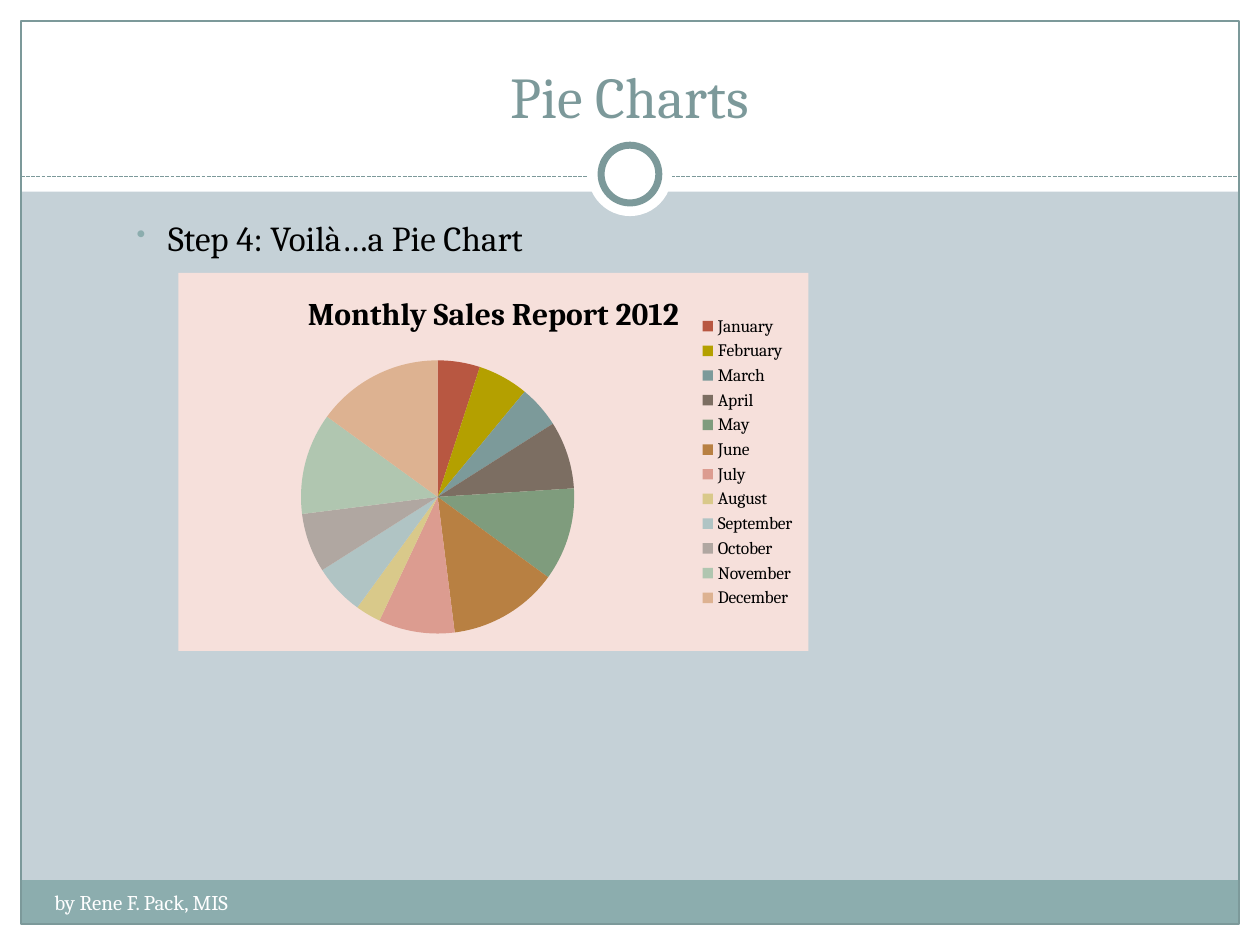
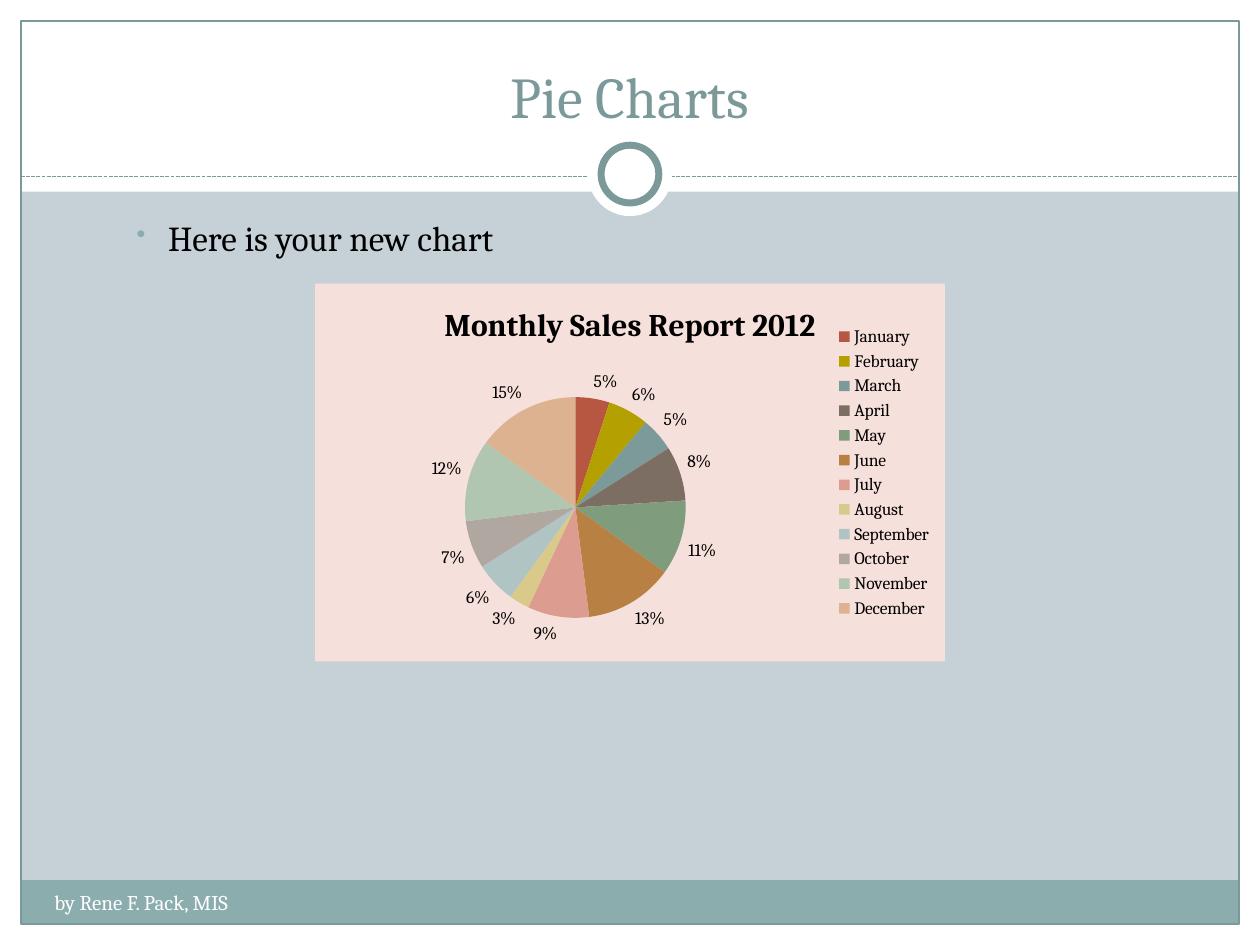
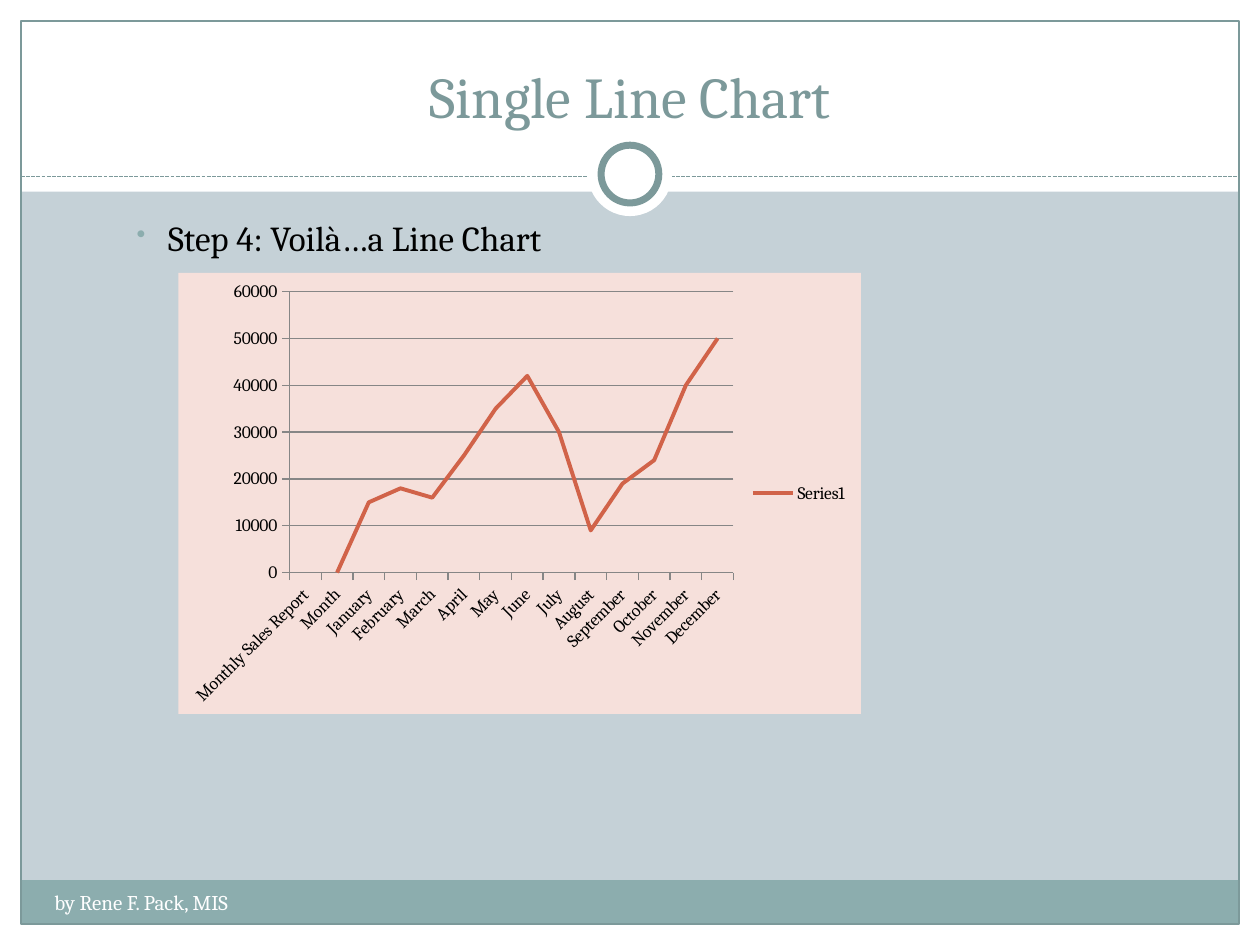
import dataclasses

import lxml.etree
import pptx
import pptx.chart.data
import pptx.dml.color
import pptx.enum.chart
import pptx.enum.dml
import pptx.enum.shapes
import pptx.enum.text
import pptx.oxml
import pptx.oxml.ns
import pptx.util

Pt = pptx.util.Pt
RGB = pptx.dml.color.RGBColor.from_string
qn = pptx.oxml.ns.qn
SHAPE = pptx.enum.shapes.MSO_SHAPE
ALIGN = pptx.enum.text.PP_ALIGN
ANCHOR = pptx.enum.text.MSO_ANCHOR
CHART = pptx.enum.chart.XL_CHART_TYPE


@dataclasses.dataclass(frozen=True)
class Theme:
    font: str = "Cambria"
    background: str = "C5D1D7"
    white: str = "FFFFFF"
    black: str = "000000"
    band: str = "8CADAE"
    accent: str = "7C999A"
    chart_fill: str = "F6E0DB"
    grid: str = "868686"
    series: str = "D16349"
    slices: tuple = (
        "B85741", "B4A000", "7C9A9A", "7C6E62", "7F9C7D", "B88042",
        "DC9C90", "D9C98A", "B0C4C4", "B0A7A1", "B0C6B0", "DDB291",
    )
    title_size: int = 33
    body_size: int = 20
    chart_title_size: int = 18
    footer_size: int = 12
    chart_size: int = 10


theme = Theme()


def add_text(s, text, at, size, color, align=ALIGN.LEFT, anchor=ANCHOR.TOP, bullet=None):
    tf = s.shapes.add_textbox(*map(Pt, at)).text_frame
    tf.word_wrap = True
    tf.vertical_anchor = anchor
    p = tf.paragraphs[0]
    p.alignment = align
    r = p.add_run()
    r.text = text
    r.font.name = theme.font
    r.font.size = Pt(size)
    r.font.color.rgb = RGB(color)
    if bullet:
        p.space_before = Pt(size * 0.2)
        pPr = p._p.get_or_add_pPr()
        pPr.set("marL", str(Pt(65)))
        pPr.set("indent", str(Pt(-18)))
        color_el = lxml.etree.SubElement(pPr, qn("a:buClr"))
        lxml.etree.SubElement(color_el, qn("a:srgbClr"), val=theme.band)
        lxml.etree.SubElement(pPr, qn("a:buSzPct"), val="75000")
        lxml.etree.SubElement(pPr, qn("a:buChar"), char=bullet)


def add_box(s, kind, at, fill=None, line=None, width=0.75):
    sp = s.shapes.add_shape(kind, *map(Pt, at))
    sp.shadow.inherit = False
    if fill:
        sp.fill.solid()
        sp.fill.fore_color.rgb = RGB(fill)
    else:
        sp.fill.background()
    if line:
        sp.line.color.rgb = RGB(line)
        sp.line.width = Pt(width)
    else:
        sp.line.fill.background()


months = [
    "January", "February", "March", "April", "May", "June", "July",
    "August", "September", "October", "November", "December",
]
report = "Monthly Sales Report"
pie = dict(
    kind=CHART.PIE, cats=months, name=f"{report} 2012",
    vals=[5, 6, 5, 8, 11, 13, 9, 3, 6, 7, 12, 15],
)
line = dict(
    kind=CHART.LINE, cats=[report, "Month"] + months, name="Series1",
    vals=[None, 0, 15000, 18000, 16000, 25000, 35000, 42000, 30000,
          9000, 19000, 24000, 40000, 50000],
)
slides = [
    ("Pie Charts", "Step 4: Voilà…a Pie Chart", pie, (102, 156, 360, 216), False),
    ("Pie Charts", "Here is your new chart", pie, (180, 162, 360, 216), True),
    ("Single Line Chart", "Step 4: Voilà…a Line Chart", line, (102, 156, 390, 252), False),
]
margins = [(0, 528, 720, 12), (0, 0, 720, 109.5), (0, 0, 12, 540), (708, 0, 12, 540)]

prs = pptx.Presentation()
prs.slide_width, prs.slide_height = Pt(720), Pt(540)
fill = prs.slide_master.background.fill
fill.solid()
fill.fore_color.rgb = RGB(theme.background)

for title, step, data, place, labelled in slides:
    s = prs.slides.add_slide(prs.slide_layouts[6])

    for at in margins:
        add_box(s, SHAPE.RECTANGLE, at, fill=theme.white)
    add_box(s, SHAPE.RECTANGLE, (12, 503, 696, 25), fill=theme.band)
    add_box(s, SHAPE.RECTANGLE, (12, 12, 696, 516), line=theme.accent)
    rule = s.shapes.add_connector(
        pptx.enum.shapes.MSO_CONNECTOR.STRAIGHT, Pt(12), Pt(100.8), Pt(708), Pt(100.8))
    rule.line.color.rgb = RGB(theme.accent)
    rule.line.width = Pt(0.75)
    rule.line.dash_style = pptx.enum.dml.MSO_LINE.SQUARE_DOT
    lxml.etree.SubElement(rule._element.spPr, qn("a:effectLst"))
    add_box(s, SHAPE.OVAL, (336, 75.5, 48, 48), fill=theme.white)
    add_box(s, SHAPE.OVAL, (343.5, 83, 33, 33), fill=theme.white, line=theme.accent, width=4)

    add_text(s, title, (24, 18, 672, 60), theme.title_size, theme.accent,
             align=ALIGN.CENTER, anchor=ANCHOR.BOTTOM)
    add_text(s, step, (24, 120, 670, 360), theme.body_size, theme.black, bullet="•")

    chart_data = pptx.chart.data.CategoryChartData()
    chart_data.categories = data["cats"]
    chart_data.add_series(data["name"], data["vals"])
    chart = s.shapes.add_chart(data["kind"], *map(Pt, place), chart_data).chart
    chart.font.name = theme.font
    chart.font.size = Pt(theme.chart_size)
    chart.font.color.rgb = RGB(theme.black)
    chart.has_legend = True
    chart.legend.position = pptx.enum.chart.XL_LEGEND_POSITION.RIGHT
    chart.legend.include_in_layout = False
    chart.element.find(qn("c:chart")).addnext(pptx.oxml.parse_xml(
        f'<c:spPr {pptx.oxml.ns.nsdecls("c", "a")}><a:solidFill>'
        f'<a:srgbClr val="{theme.chart_fill}"/></a:solidFill>'
        '<a:ln><a:noFill/></a:ln></c:spPr>'))
    plot = chart.plots[0]
    series = plot.series[0]

    if data["kind"] == CHART.PIE:
        chart.has_title = True
        p = chart.chart_title.text_frame.paragraphs[0]
        r = p.add_run()
        r.text = data["name"]
        r.font.name = theme.font
        r.font.size = Pt(theme.chart_title_size)
        r.font.bold = True
        r.font.color.rgb = RGB(theme.black)
        plot.vary_by_categories = True
        for i, color in enumerate(theme.slices):
            fill = series.points[i].format.fill
            fill.solid()
            fill.fore_color.rgb = RGB(color)
        if labelled:
            plot.has_data_labels = True
            labels = plot.data_labels
            labels.show_percentage = True
            labels.show_value = False
            labels.number_format = "0%"
            labels.number_format_is_linked = False
            labels.position = pptx.enum.chart.XL_LABEL_POSITION.OUTSIDE_END
    else:
        chart.has_title = False
        plot.vary_by_categories = False
        series.smooth = False
        series.format.line.color.rgb = RGB(theme.series)
        series.format.line.width = Pt(2.25)
        chart.value_axis.has_major_gridlines = True
        for part in (chart.value_axis, chart.category_axis, chart.value_axis.major_gridlines):
            part.format.line.color.rgb = RGB(theme.grid)
            part.format.line.width = Pt(0.75)

    add_text(s, "by Rene F. Pack, MIS", (24, 504.5, 282, 29), theme.footer_size, theme.white)

prs.save("out.pptx")
